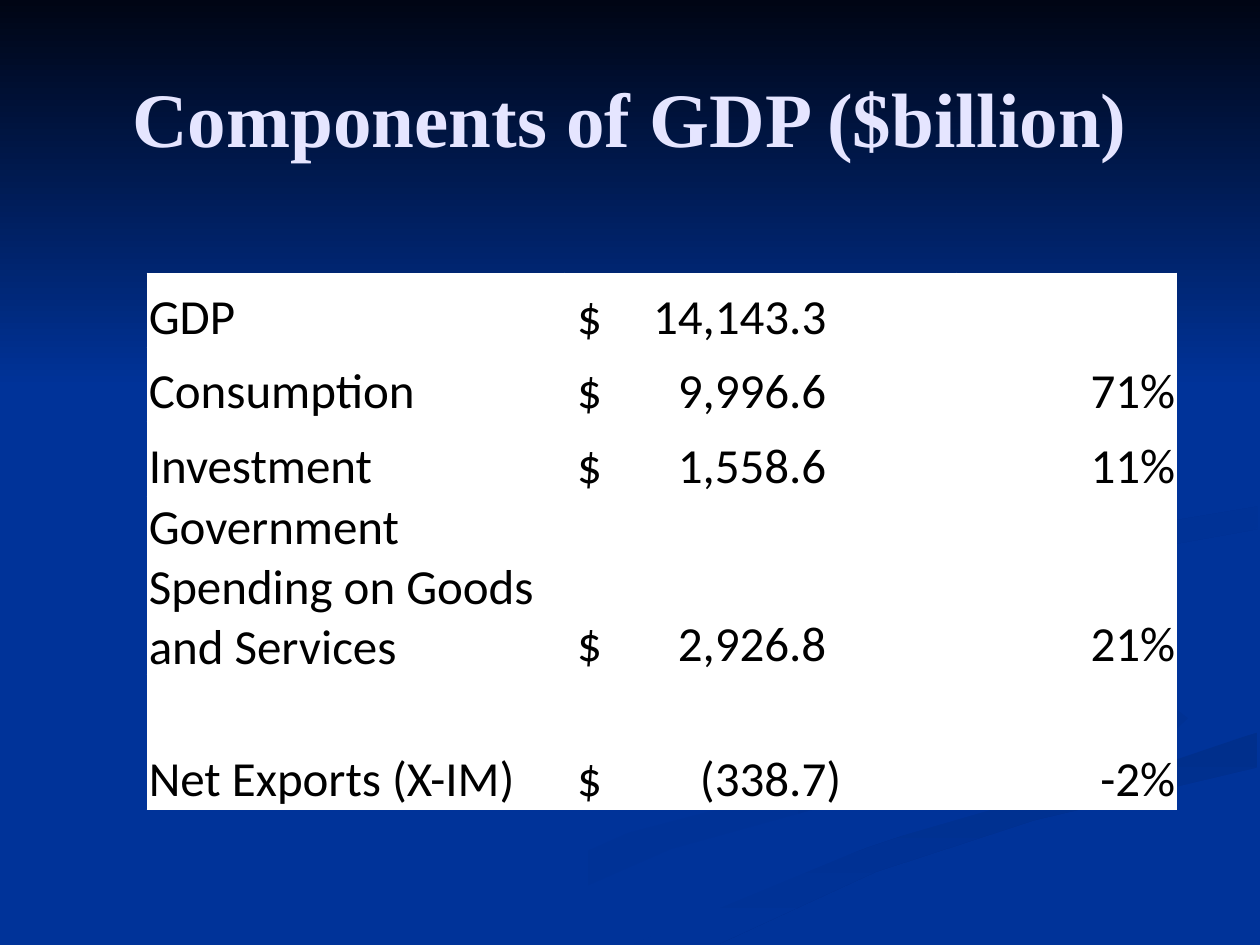
"""Build the slide on the components of GDP."""
from lxml import etree
from pptx import Presentation, util as u
from pptx.dml.color import RGBColor
from pptx.enum import shapes, text
from pptx.oxml.ns import qn

NAVY = RGBColor(0x00, 0x33, 0x99)
NIGHT = RGBColor(0x00, 0x05, 0x14)
DUSK = RGBColor(0x00, 0x31, 0x93)
DEEP = RGBColor(0x00, 0x2F, 0x8C)
SHADE = RGBColor(0x00, 0x30, 0x91)
DIM = RGBColor(0x00, 0x2F, 0x8E)
PALE = RGBColor(0xE5, 0xE5, 0xFF)
WHITE = RGBColor(0xFF, 0xFF, 0xFF)
BLACK = RGBColor(0x00, 0x00, 0x00)

TITLE = "Components of GDP ($billion)"
ROWS = [
    ("GDP", "14,143.3", ""),
    ("Consumption", "9,996.6", "71%"),
    ("Investment", "1,558.6", "11%"),
    ("Government Spending on Goods and Services", "2,926.8", "21%"),
    ("Net Exports (X-IM)", "(338.7)", "-2%"),
]
WIDTHS = [8.41, 7.9, 4.44]
HEIGHTS = [1.5, 1.5, 1.5, 3.38, 2.72]
UNIT = u.Cm(0.0254)

WAVES = [
    (NAVY, DUSK, 0, [
        (781, 553), (602, 490), (575, 459), (586, 487), (786, 566),
        (739, 598), (499, 661), (300, 749), (361, 749), (532, 674),
        (780, 605), (800, 581)]),
    (NAVY, DUSK, 45, [
        (943, 570), (905, 540), (758, 498), (724, 464), (746, 500),
        (900, 557), (918, 581), (894, 605), (937, 586)]),
    (DEEP, NAVY, 90, [
        (503, 749), (571, 749), (695, 692), (821, 651), (998, 609),
        (998, 581), (936, 602), (764, 647), (630, 693)]),
    (NAVY, None, 0, [
        (725, 464), (759, 498), (905, 540), (943, 570), (911, 600),
        (663, 668), (477, 749), (503, 749), (696, 669), (999, 581),
        (999, 538), (866, 509), (781, 463), (822, 434), (999, 402),
        (999, 387), (770, 427)]),
    (SHADE, NAVY, 45, [
        (781, 460), (791, 478), (826, 496), (805, 472), (843, 448),
        (998, 420), (998, 402), (849, 427)]),
    (DIM, NAVY, 45, [
        (683, 430), (855, 391), (894, 344), (843, 275), (762, 233),
        (870, 299), (886, 348), (818, 386), (615, 429), (577, 462),
        (622, 500), (593, 470), (624, 444)]),
]


def paint(shape, first, last, angle):
    shape.shadow.inherit = False
    shape.line.fill.background()
    if last is None:
        shape.fill.solid()
        shape.fill.fore_color.rgb = first
        return
    shape.fill.gradient()
    shape.fill.gradient_angle = (360 - angle) % 360
    for stop, tone in zip(shape.fill.gradient_stops, (first, last)):
        stop.color.rgb = tone


def write(para, words, face, size, tone, bold=False):
    run = para.add_run()
    run.text = words
    font = run.font
    font.name, font.size, font.bold = face, u.Pt(size), bold
    font.color.rgb = tone


def set_tab(para, place):
    stops = etree.SubElement(para._p.get_or_add_pPr(), qn("a:tabLst"))
    etree.SubElement(stops, qn("a:tab"), pos=str(place), algn="dec")


def add_waves(slide):
    for first, last, angle, points in WAVES:
        pen = slide.shapes.build_freeform(*points[0], scale=UNIT)
        pen.add_line_segments(points[1:], close=True)
        paint(pen.convert_to_shape(), first, last, angle)


def add_title(slide):
    box = slide.shapes.add_textbox(u.Cm(1.27), u.Cm(0.76), u.Cm(22.86), u.Cm(3.18))
    frame = box.text_frame
    frame.word_wrap = True
    frame.vertical_anchor = text.MSO_ANCHOR.MIDDLE
    para = frame.paragraphs[0]
    para.alignment = text.PP_ALIGN.CENTER
    write(para, TITLE, "Times New Roman", 44, PALE, True)


def add_grid(slide):
    grid = slide.shapes.add_table(
        len(ROWS), len(WIDTHS), u.Cm(2.97), u.Cm(5.51),
        u.Cm(sum(WIDTHS)), u.Cm(sum(HEIGHTS))).table
    for col, width in zip(grid.columns, WIDTHS):
        col.width = u.Cm(width)
    for row, height, words in zip(grid.rows, HEIGHTS, ROWS):
        row.height = u.Cm(height)
        for spot, (cell, word) in enumerate(zip(row.cells, words)):
            cell.fill.solid()
            cell.fill.fore_color.rgb = WHITE
            cell.vertical_anchor = text.MSO_ANCHOR.BOTTOM
            cell.margin_left = cell.margin_right = cell.margin_top = u.Cm(0.03)
            cell.margin_bottom = 0
            para = cell.text_frame.paragraphs[0]
            if spot == 1:
                set_tab(para, u.Cm(4.5))
                word = " $\t" + word
            elif spot == 2:
                para.alignment = text.PP_ALIGN.RIGHT
            if word:
                write(para, word, "Calibri", 28, BLACK)


def main():
    deck = Presentation()
    deck.slide_width, deck.slide_height = u.Cm(25.4), u.Cm(19.05)
    slide = deck.slides.add_slide(deck.slide_layouts[6])
    slide.background.fill.solid()
    slide.background.fill.fore_color.rgb = NAVY
    add_waves(slide)
    sky = slide.shapes.add_shape(
        shapes.MSO_SHAPE.RECTANGLE, 0, 0, deck.slide_width, u.Cm(7.82))
    paint(sky, NIGHT, NAVY, 90)
    add_title(slide)
    add_grid(slide)
    deck.save("out.pptx")


if __name__ == "__main__":
    main()
